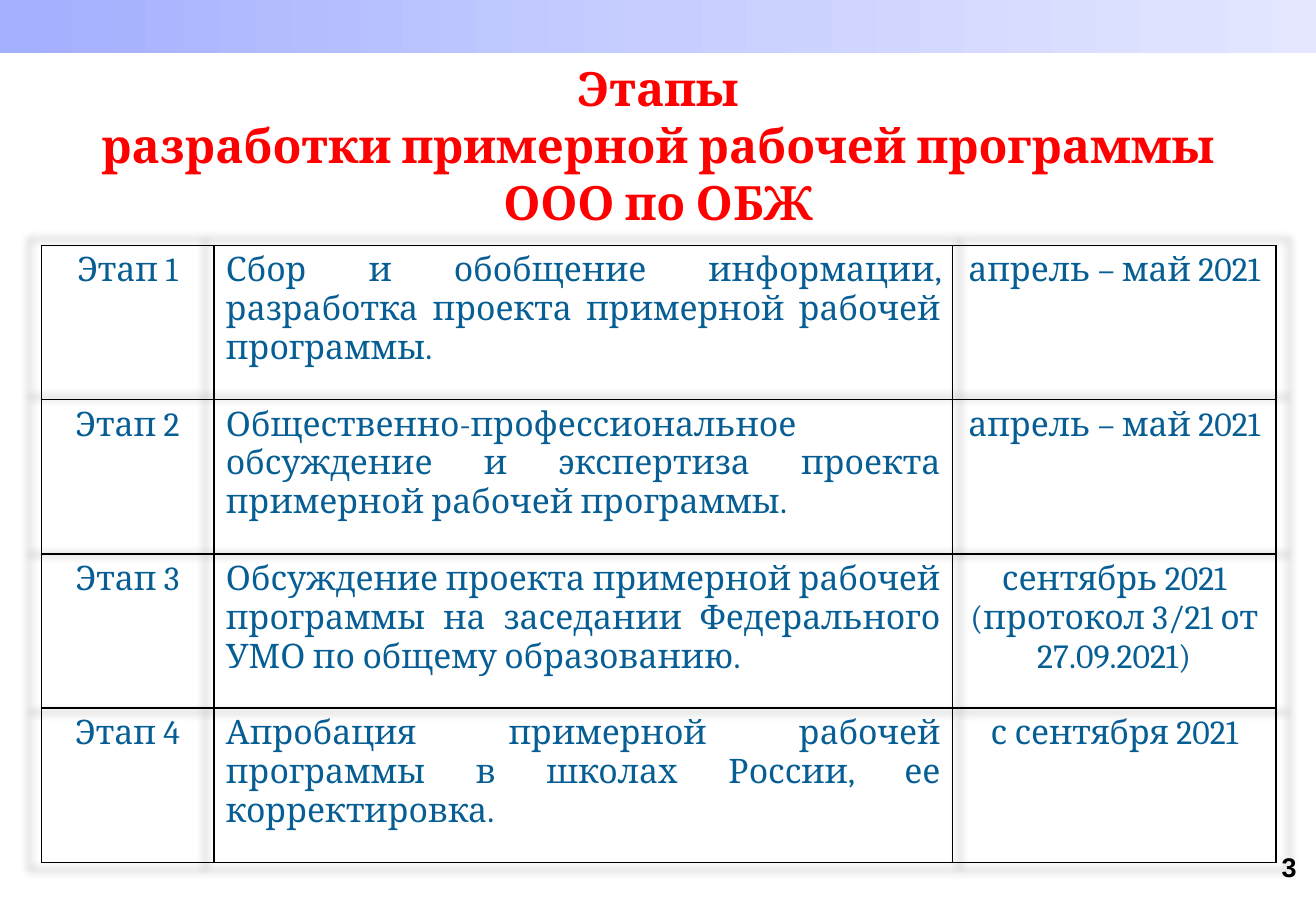
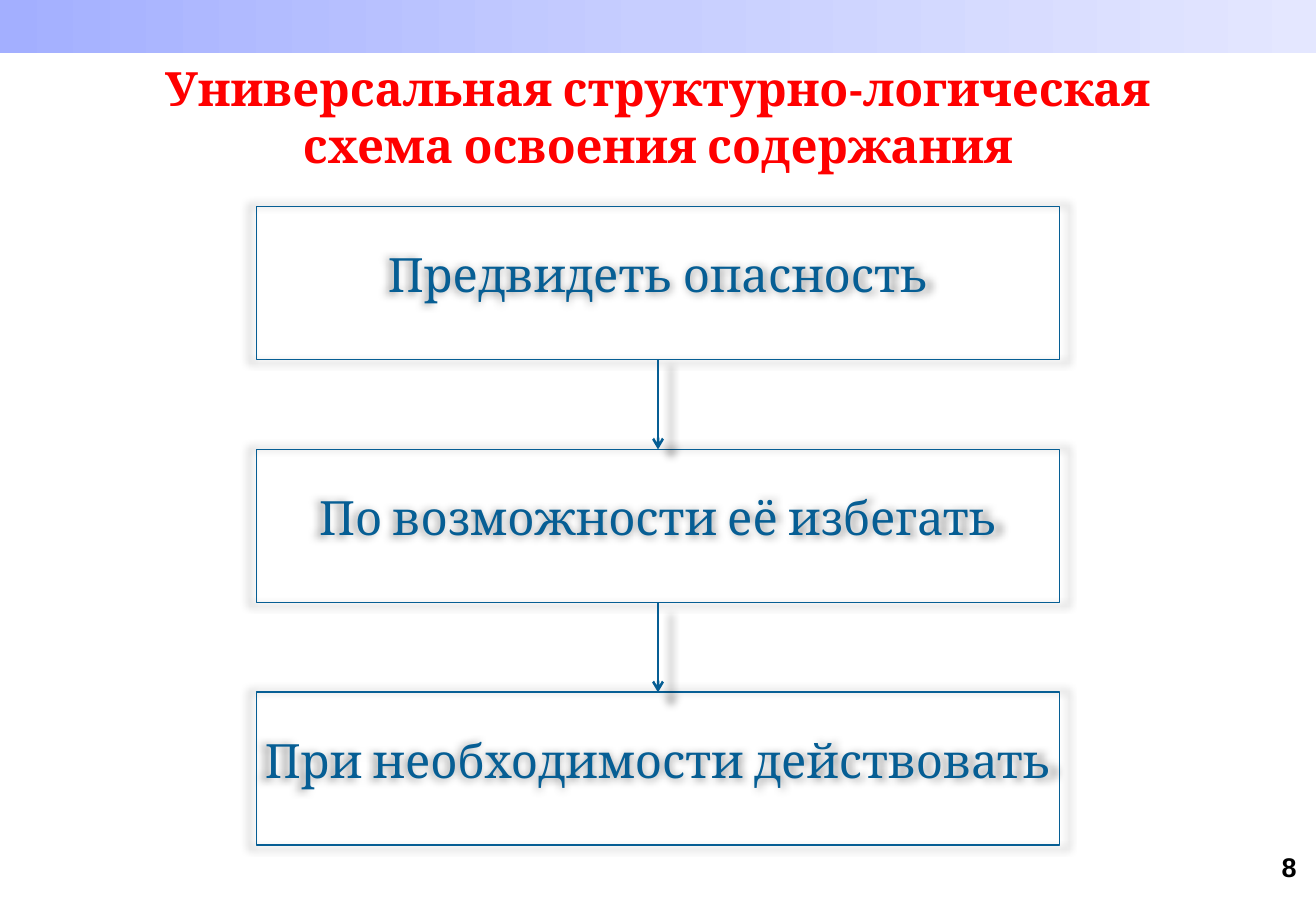
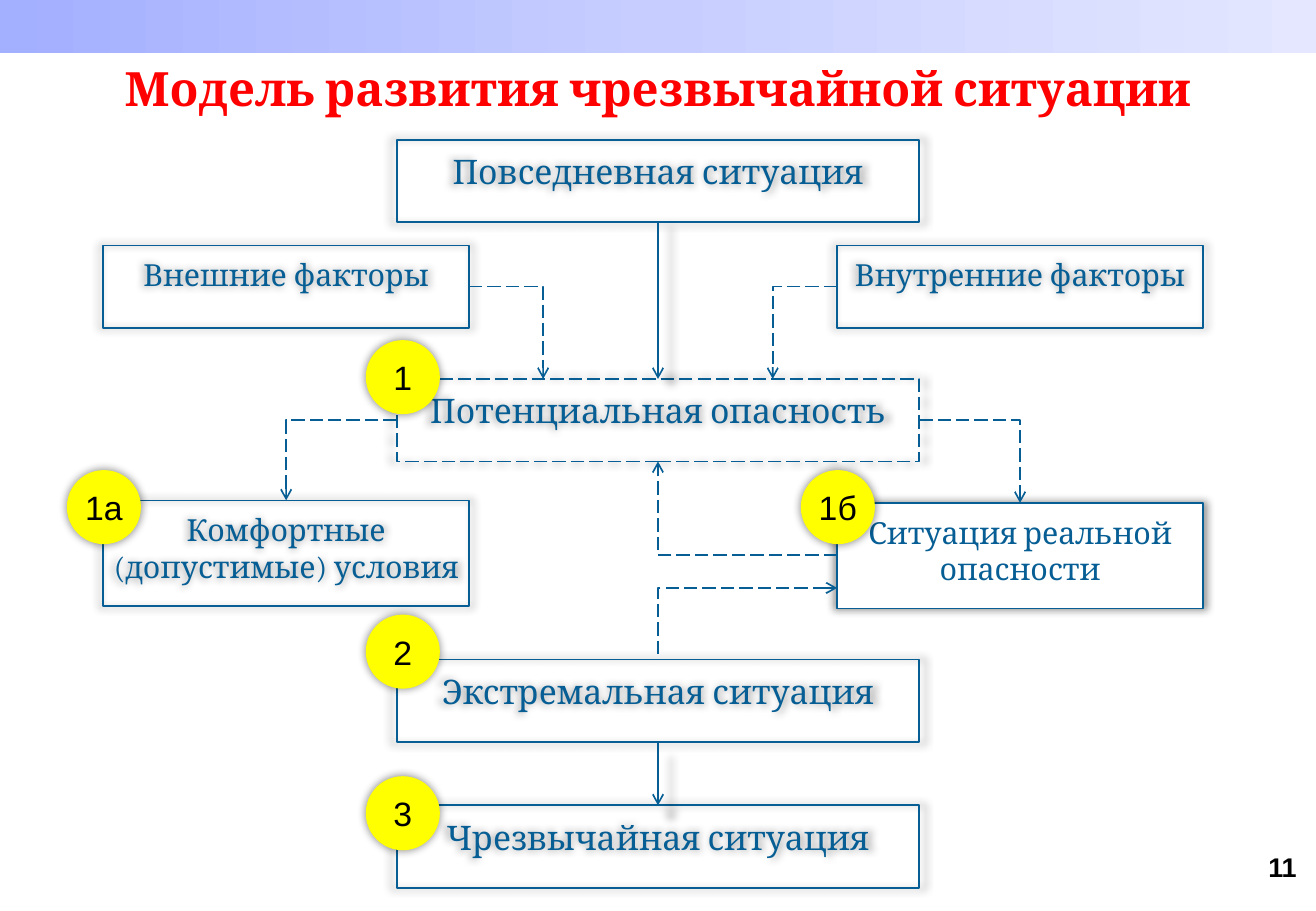
from copy import deepcopy

from lxml.etree import SubElement
from pptx import Presentation
from pptx.dml.color import RGBColor
from pptx.enum.dml import MSO_LINE
from pptx.enum.shapes import MSO_CONNECTOR, MSO_SHAPE
from pptx.enum.text import MSO_ANCHOR, PP_ALIGN
from pptx.oxml import parse_xml
from pptx.oxml.ns import nsdecls, qn
from pptx.util import Inches, Pt

WIDTH, HEIGHT = 10.83, 7.5
CENTRE = WIDTH / 2
BLUE = RGBColor(0x06, 0x5E, 0x94)
RED = RGBColor(0xFF, 0x00, 0x00)
BLACK = RGBColor(0x00, 0x00, 0x00)
WHITE = RGBColor(0xFF, 0xFF, 0xFF)
YELLOW = RGBColor(0xFF, 0xFF, 0x00)
BAND = [
    (0, RGBColor(0xA3, 0xAF, 0xFF)),
    (0.5, RGBColor(0xC7, 0xCE, 0xFF)),
    (1, RGBColor(0xE4, 0xE7, 0xFF)),
]
SERIF, SANS = "Cambria", "Arial"

STAGES = [
    ("Этап 1",
     "Сбор и обобщение информации, разработка проекта примерной рабочей программы.",
     "апрель – май 2021"),
    ("Этап 2",
     "Общественно-профессиональное обсуждение и экспертиза проекта примерной рабочей программы.",
     "апрель – май 2021"),
    ("Этап 3",
     "Обсуждение проекта примерной рабочей программы на заседании Федерального УМО по общему образованию.",
     "сентябрь 2021\n(протокол 3/21 от 27.09.2021)"),
    ("Этап 4",
     "Апробация примерной рабочей программы в школах России, ее корректировка.",
     "с сентября 2021"),
]
STEPS = ["Предвидеть опасность", "По возможности её избегать", "При необходимости действовать"]


def write(frame, text, size, color=BLUE, font=SERIF, bold=False, align=PP_ALIGN.CENTER):
    """Fill a text frame with evenly styled paragraphs."""
    frame.word_wrap = True
    frame.text = text
    for para in frame.paragraphs:
        para.alignment = align
        para.font.size, para.font.name, para.font.bold = Pt(size), font, bold
        para.font.color.rgb = color


def set_insets(frame, side, top, bottom):
    """Set the inner margins of a text frame in inches."""
    frame.margin_left = frame.margin_right = Inches(side)
    frame.margin_top, frame.margin_bottom = Inches(top), Inches(bottom)


def add_glow(effects):
    """Put the soft all-round shadow into an effect list."""
    effects.append(parse_xml(
        f'<a:outerShdw {nsdecls("a")} blurRad="63500" sx="102000" sy="102000" '
        'algn="ctr" rotWithShape="0"><a:srgbClr val="000000"><a:alpha val="40000"/>'
        '</a:srgbClr></a:outerShdw>'))


def add_preset(page, kind, left, top, width, height):
    """Add a preset shape without the theme's shadow."""
    shape = page.shapes.add_shape(kind, Inches(left), Inches(top), Inches(width), Inches(height))
    shape.shadow.inherit = False
    return shape


def add_label(page, left, top, width, height, text, **style):
    """Add a text box."""
    label = page.shapes.add_textbox(Inches(left), Inches(top), Inches(width), Inches(height))
    write(label.text_frame, text, **style)


def add_band(page):
    """Draw the gradient band along the top edge."""
    band = add_preset(page, MSO_SHAPE.RECTANGLE, 0, -0.01, WIDTH, 0.45)
    band.line.fill.background()
    band.fill.gradient()
    band.fill.gradient_angle = 0
    stops = band.element.spPr.find(".//" + qn("a:gsLst"))
    stops.append(deepcopy(stops[0]))
    for stop, (position, color) in zip(band.fill.gradient_stops, BAND):
        stop.position = position
        stop.color.rgb = color


def add_page(deck, title, number, title_width=9.06):
    """Add a page with its band, number and title."""
    page = deck.slides.add_slide(deck.slide_layouts[6])
    add_band(page)
    add_label(page, 8.51, 6.95, 2.26, 0.5, str(number), size=16, color=BLACK,
              font=SANS, bold=True, align=PP_ALIGN.RIGHT)
    add_label(page, (WIDTH - title_width) / 2, 0.44, title_width, 1.04, title,
              size=28, color=RED, bold=True)
    return page


def add_box(page, left, top, width, height, text, size, inset=0.09, fill=None, dashed=False):
    """Draw an outlined box with its text at the top."""
    box = add_preset(page, MSO_SHAPE.RECTANGLE, left, top, width, height)
    if fill is None:
        box.fill.background()
    else:
        box.fill.solid()
        box.fill.fore_color.rgb = fill
    box.line.color.rgb, box.line.width = BLUE, Pt(1)
    if dashed:
        box.line.dash_style = MSO_LINE.LONG_DASH
    add_glow(box.element.spPr.find(qn("a:effectLst")))
    set_insets(box.text_frame, 0.07, inset, 0.03)
    box.text_frame.vertical_anchor = MSO_ANCHOR.TOP
    write(box.text_frame, text, size)


def add_badge(page, left, top, text):
    """Draw a yellow numbered circle."""
    badge = add_preset(page, MSO_SHAPE.OVAL, left, top, 0.61, 0.61)
    badge.fill.solid()
    badge.fill.fore_color.rgb = YELLOW
    badge.line.fill.background()
    add_glow(badge.element.spPr.find(qn("a:effectLst")))
    set_insets(badge.text_frame, 0, 0.03, 0.03)
    badge.text_frame.vertical_anchor = MSO_ANCHOR.MIDDLE
    write(badge.text_frame, text, 20, BLACK, SANS)


def add_link(page, kind, start, finish, width, dashed=False, end="a:tailEnd"):
    """Draw a connector with an arrowhead at one end and return it."""
    link = page.shapes.add_connector(kind, *(Inches(value) for value in (*start, *finish)))
    link.line.color.rgb, link.line.width = BLUE, Pt(width)
    if dashed:
        link.line.dash_style = MSO_LINE.LONG_DASH
    SubElement(link.element.spPr.find(qn("a:ln")), qn(end)).set("type", "arrow")
    SubElement(link.element.spPr, qn("a:effectLst"))
    return link


def add_arrow(page, top, bottom, width=1):
    """Draw a downward arrow on the centre line."""
    arrow = add_link(page, MSO_CONNECTOR.STRAIGHT, (CENTRE, top), (CENTRE, bottom), width)
    add_glow(arrow.element.spPr.find(qn("a:effectLst")))


def add_elbow(page, start, finish, end="a:tailEnd"):
    """Draw a dashed arrow that runs level first and then upright."""
    elbow = add_link(page, MSO_CONNECTOR.ELBOW, start, finish, 1, True, end)
    elbow.element.spPr.find(qn("a:prstGeom")).set("prst", "bentConnector2")


def style_cell(cell, text, align):
    """Write a table cell with black borders and no fill."""
    write(cell.text_frame, text, 20, align=align)
    cell.fill.background()
    properties = cell._tc.get_or_add_tcPr()
    for index, side in enumerate("LRTB"):
        properties.insert(index, parse_xml(
            f'<a:ln{side} {nsdecls("a")} w="12700"><a:solidFill>'
            f'<a:srgbClr val="{BLACK}"/></a:solidFill></a:ln{side}>'))


def add_stage_table(page, left, top, widths, row_height):
    """Draw the table of stages."""
    frame = page.shapes.add_table(len(STAGES), len(widths), Inches(left), Inches(top),
                                  Inches(sum(widths)), Inches(row_height * len(STAGES)))
    table = frame.table
    table.first_row = table.horz_banding = False
    effects = parse_xml(f'<a:effectLst {nsdecls("a")}/>')
    add_glow(effects)
    table._tbl.tblPr.insert(0, effects)
    for column, width in zip(table.columns, widths):
        column.width = Inches(width)
    aligns = (PP_ALIGN.CENTER, PP_ALIGN.JUSTIFY, PP_ALIGN.CENTER)
    for row, stage in zip(table.rows, STAGES):
        row.height = Inches(row_height)
        for cell, text, align in zip(row.cells, stage, aligns):
            style_cell(cell, text, align)


def add_step_chain(page, top, width, height, pitch):
    """Draw the steps one under another, joined by arrows."""
    for index, step in enumerate(STEPS):
        y = top + index * pitch
        add_box(page, CENTRE - width / 2, y, width, height, step, 28, inset=0.32)
        if index:
            add_arrow(page, y - pitch + height, y, 1.5)


def add_situation_model(page):
    """Draw the model of how an emergency develops."""
    wide, low, narrow, high = 4.3, 0.68, 3.01, 0.87
    middle, left, right = CENTRE - wide / 2, 0.85, 6.89
    daily, factors, potential, extreme, emergency = 1.15, 2.02, 3.12, 5.43, 6.63
    comfort, danger = 4.12, 4.14
    factor_line, potential_line = factors + low / 2, potential + low / 2

    for top, text in ((daily, "Повседневная ситуация"), (potential, "Потенциальная опасность"),
                      (extreme, "Экстремальная ситуация"), (emergency, "Чрезвычайная ситуация")):
        add_box(page, middle, top, wide, low, text, 20, dashed=top == potential)
    for x, text in ((left, "Внешние факторы"), (right, "Внутренние факторы")):
        add_box(page, x, factors, narrow, low, text, 18)
    add_box(page, left, comfort, narrow, high, "Комфортные (допустимые) условия", 18)
    add_box(page, right, danger, narrow, high, "Ситуация реальной опасности", 18, fill=WHITE)

    add_arrow(page, daily + low, potential)
    add_arrow(page, extreme + low, emergency)
    add_elbow(page, (left + narrow, factor_line), (4.47, potential))
    add_elbow(page, (right, factor_line), (6.36, potential))
    add_elbow(page, (middle, potential_line), (left + narrow / 2, comfort))
    add_elbow(page, (middle + wide, potential_line), (right + narrow / 2, danger))
    add_elbow(page, (right, 4.57), (CENTRE, potential + low))
    add_elbow(page, (right, 4.84), (CENTRE, extreme), "a:headEnd")

    for x, y, text in ((6.59, 3.87, "1б"), (0.55, 3.87, "1а"), (3.01, 2.8, "1"),
                       (3.01, 5.06, "2"), (3.01, 6.39, "3")):
        add_badge(page, x, y, text)


def main():
    """Build and save the deck."""
    deck = Presentation()
    deck.slide_width, deck.slide_height = Inches(WIDTH), Inches(HEIGHT)
    page = add_page(deck, "Этапы\nразработки примерной рабочей программы ООО по ОБЖ", 3, 10.16)
    add_stage_table(page, 0.34, 2.02, (1.42, 6.08, 2.66), 1.27)
    page = add_page(deck, "Универсальная структурно-логическая схема освоения содержания", 8)
    add_step_chain(page, 1.7, 6.61, 1.26, 2)
    page = add_page(deck, "Модель развития чрезвычайной ситуации", 11)
    add_situation_model(page)
    deck.save("out.pptx")


if __name__ == "__main__":
    main()
